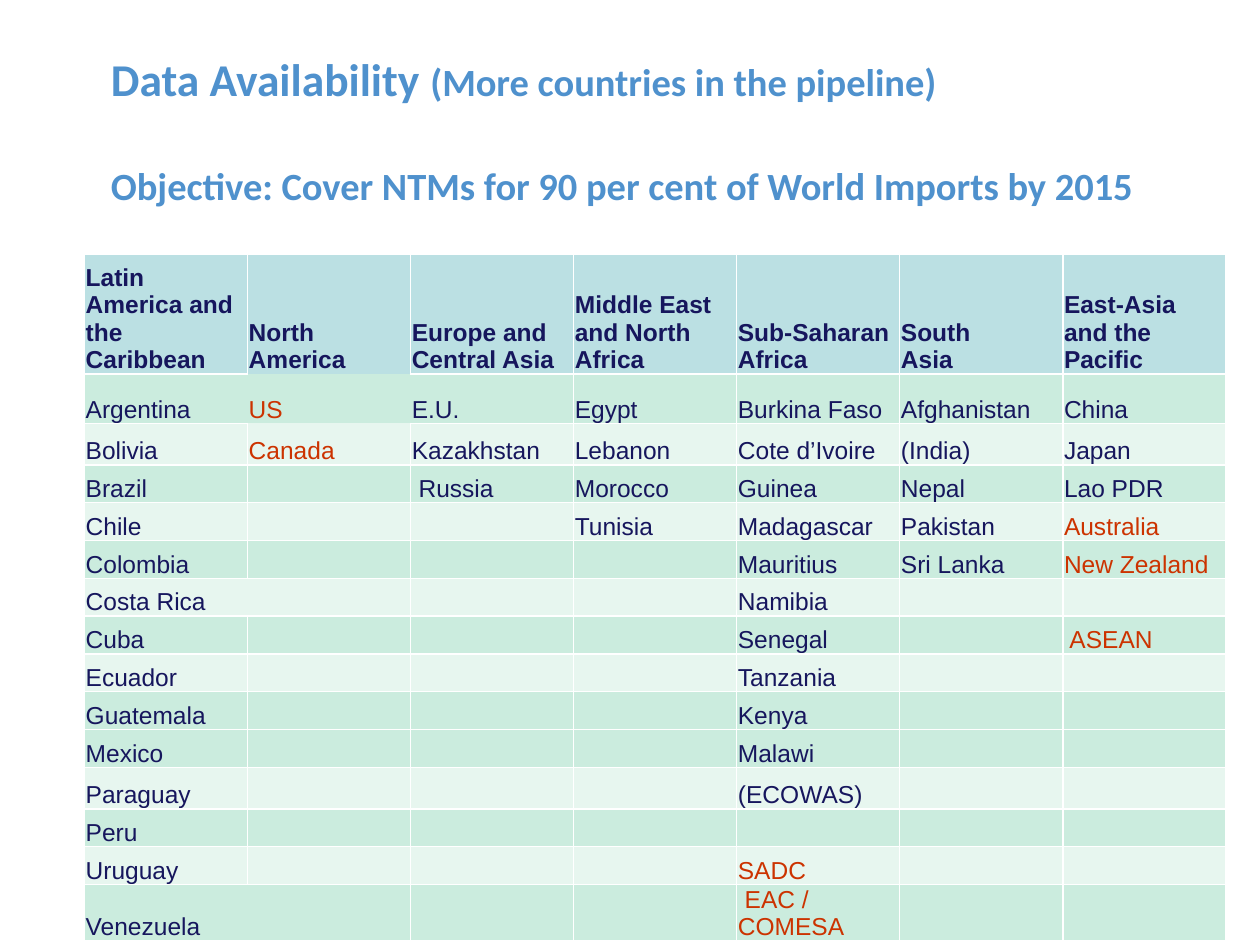
from lxml.etree import SubElement
from pptx import Presentation
from pptx.dml.color import RGBColor
from pptx.enum.text import MSO_ANCHOR, MSO_AUTO_SIZE, PP_ALIGN
from pptx.oxml.ns import qn
from pptx.util import Inches, Pt

BLUE, NAVY, RED = "4F91CD", "16165D", "CC3300"
HEADER, DARK, LIGHT = "BBE0E3", "CBECDE", "E7F6EF"

TITLE = [
    [("Data Availability ", 26), ("(More countries in the pipeline)", 22)],
    [("Objective: Cover NTMs for 90 per cent of World Imports by 2015", 22)],
]
REGIONS = [
    ("Latin America and the Caribbean",
     ["Argentina", "Bolivia", "Brazil", "Chile", "Colombia", "Costa Rica", "Cuba",
      "Ecuador", "Guatemala", "Mexico", "Paraguay", "Peru", "Uruguay", "Venezuela"]),
    ("North America", ["US", "Canada"]),
    ("Europe and Central Asia", ["E.U.", "Kazakhstan", " Russia"]),
    ("Middle East and North Africa", ["Egypt", "Lebanon", "Morocco", "Tunisia"]),
    ("Sub-Saharan Africa",
     ["Burkina Faso", "Cote d’Ivoire", "Guinea", "Madagascar", "Mauritius", "Namibia",
      "Senegal", "Tanzania", "Kenya", "Malawi", "(ECOWAS)", "", "SADC", " EAC / COMESA"]),
    ("South\nAsia", ["Afghanistan", "(India)", "Nepal", "Pakistan", "Sri Lanka"]),
    ("East-Asia and the Pacific",
     ["China", "Japan", "Lao PDR", "Australia", "New Zealand", "", " ASEAN"]),
]
HIGHLIGHTED = {"US", "Canada", "Australia", "New Zealand", "ASEAN", "SADC", "EAC / COMESA"}
ROW_HEIGHTS = [0.95, 0.39, 0.33] + [0.3] * 8 + [0.33, 0.3, 0.3, 0.44]
LIGHT_ROWS = {2, 4, 6, 8, 11, 13}
MERGED_ROWS = [6, 14]
OPEN_EDGES = {(0, 1): "B", (1, 0): "R", (1, 1): "LRTB", (1, 2): "L", (2, 1): "T"}


def rgb(color):
    return RGBColor.from_string(color)


def set_font(font, name, size, color, bold):
    font.name, font.size, font.bold = name, Pt(size), bold
    font.color.rgb = rgb(color)


def fill_title(sp):
    sp.left, sp.top, sp.width, sp.height = map(Inches, (0.78, 0.44, 8.5, 1.18))
    tf = sp.text_frame
    tf.auto_size = MSO_AUTO_SIZE.NONE
    tf.vertical_anchor = MSO_ANCHOR.MIDDLE
    for i, line in enumerate(TITLE):
        p = tf.add_paragraph() if i else tf.paragraphs[0]
        p.alignment = PP_ALIGN.LEFT
        p.space_before = Pt(32 * i)
        for text, size in line:
            r = p.add_run()
            r.text = text
            set_font(r.font, "Calibri", size, BLUE, True)


def fill_cell(cell, text, fill, bold):
    cell.margin_left = cell.margin_right = cell.margin_top = Inches(0.01)
    cell.margin_bottom = 0
    cell.vertical_anchor = MSO_ANCHOR.BOTTOM
    cell.fill.solid()
    cell.fill.fore_color.rgb = rgb(fill)
    cell.text = text
    color = RED if text.strip() in HIGHLIGHTED else NAVY
    for p in cell.text_frame.paragraphs:
        set_font(p.font, "Arial", 14, color, bold)


def open_edges(cell, edges):
    tcPr = cell._tc.get_or_add_tcPr()
    for i, edge in enumerate(edges):
        ln = SubElement(tcPr, qn(f"a:ln{edge}"))
        SubElement(ln, qn("a:noFill"))
        tcPr.insert(i, ln)


def add_regions(s):
    table = s.shapes.add_table(len(ROW_HEIGHTS), len(REGIONS), Inches(0.67), Inches(2.02),
                               Inches(9.06), Inches(sum(ROW_HEIGHTS))).table
    for row, height in zip(table.rows, ROW_HEIGHTS):
        row.height = Inches(height)
    for c, (region, countries) in enumerate(REGIONS):
        fill_cell(table.cell(0, c), region, HEADER, True)
        for r in range(1, len(ROW_HEIGHTS)):
            text = countries[r - 1] if r <= len(countries) else ""
            fill_cell(table.cell(r, c), text, LIGHT if r in LIGHT_ROWS else DARK, False)
    for r in MERGED_ROWS:
        table.cell(r, 0).merge(table.cell(r, 1))
    for (r, c), edges in OPEN_EDGES.items():
        open_edges(table.cell(r, c), edges)


def main():
    prs = Presentation()
    prs.slide_width, prs.slide_height = Inches(10), Inches(7.5)
    s = prs.slides.add_slide(prs.slide_layouts[5])
    fill_title(s.shapes.title)
    add_regions(s)
    prs.save("out.pptx")


if __name__ == "__main__":
    main()
